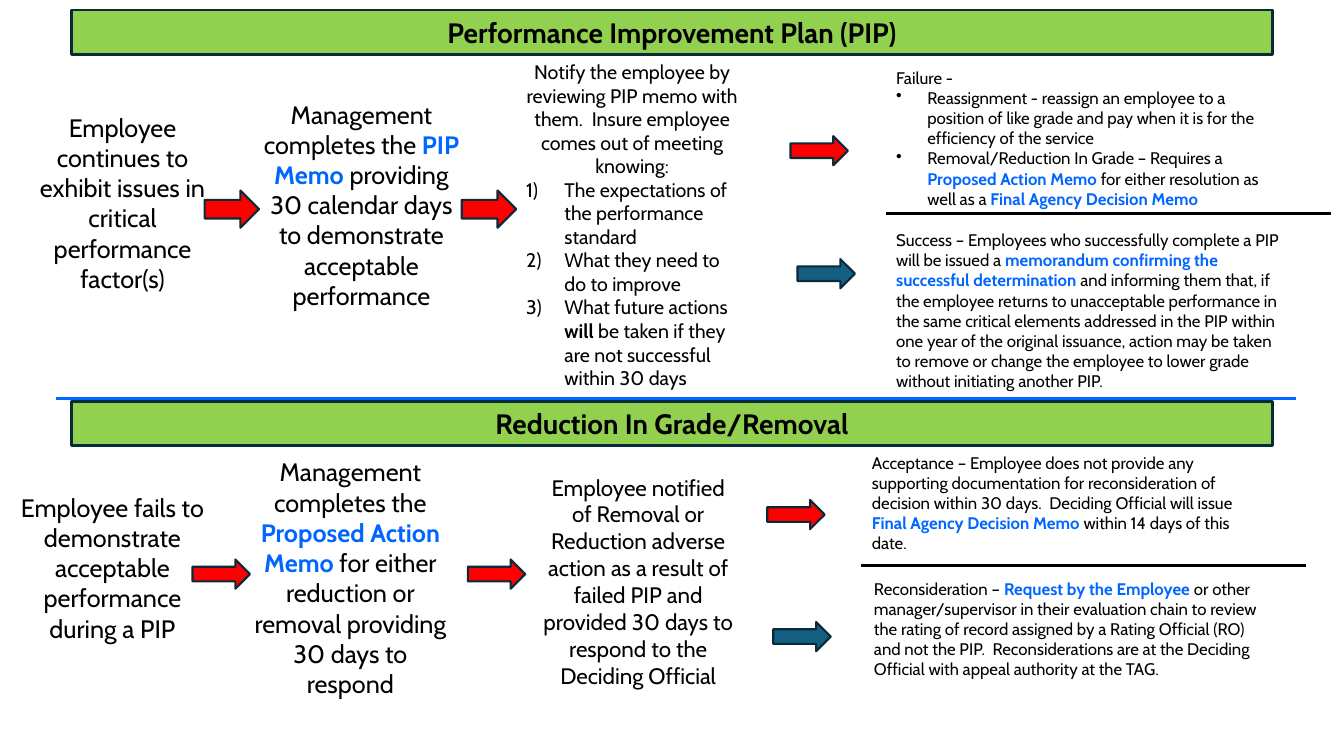
from dataclasses import dataclass

from lxml import etree
from pptx import Presentation
from pptx.dml.color import RGBColor
from pptx.enum.shapes import MSO_CONNECTOR, MSO_SHAPE
from pptx.enum.text import MSO_ANCHOR, MSO_AUTO_SIZE, PP_ALIGN
from pptx.oxml.ns import qn
from pptx.util import Inches, Pt

RECT = MSO_SHAPE.RECTANGLE
ARROW = MSO_SHAPE.RIGHT_ARROW
STRAIGHT = MSO_CONNECTOR.STRAIGHT
TOP, MIDDLE = MSO_ANCHOR.TOP, MSO_ANCHOR.MIDDLE
LEFT, CENTER = PP_ALIGN.LEFT, PP_ALIGN.CENTER
GROW = MSO_AUTO_SIZE.SHAPE_TO_FIT_TEXT


@dataclass(frozen=True)
class Theme:
    face: str = "Cabin"
    ink: RGBColor = RGBColor(0, 0, 0)
    link: RGBColor = RGBColor(0x00, 0x66, 0xFF)
    edge: RGBColor = RGBColor(0x09, 0x2A, 0x39)
    green: RGBColor = RGBColor(0x92, 0xD0, 0x50)
    red: RGBColor = RGBColor(0xFF, 0x00, 0x00)
    teal: RGBColor = RGBColor(0x15, 0x60, 0x82)
    title: int = 20
    step: int = 18
    note: int = 16
    list: int = 14
    small: int = 12


THEME = Theme()


def style(para, size, align, bold=False):
    para.alignment = align
    font = para.font
    font.name, font.size, font.bold = THEME.face, Pt(size), bold
    font.color.rgb = THEME.ink


def add_runs(para, text):
    for part in text.split("|"):
        run = para.add_run()
        run.text = part.lstrip("@!")
        if part[0] in "@!":
            run.font.bold = True
        if part[0] == "@":
            run.font.color.rgb = THEME.link


def add_mark(para, tag, value, indent):
    props = para._p.get_or_add_pPr()
    props.set("marL", str(Inches(indent)))
    props.set("indent", str(-Inches(indent)))
    mark = etree.Element(qn(f"a:{tag}"))
    mark.set("char" if tag == "buChar" else "type", value)
    props.insert_element_before(mark, "a:tabLst", "a:defRPr", "a:extLst")


def add_text(slide, box, size, text, align=LEFT, anchor=TOP):
    frame = slide.shapes.add_textbox(*map(Inches, box)).text_frame
    frame.word_wrap = True
    frame.auto_size = GROW
    frame.vertical_anchor = anchor
    para = frame.paragraphs[0]
    style(para, size, align)
    add_runs(para, text)
    return frame


def add_items(frame, items, size, tag, value, indent):
    for item in items:
        para = frame.add_paragraph()
        style(para, size, LEFT)
        add_mark(para, tag, value, indent)
        add_runs(para, item)


def add_block(slide, kind, box, fill, width):
    shape = slide.shapes.add_shape(kind, *map(Inches, box))
    shape.shadow.inherit = False
    shape.fill.solid()
    shape.fill.fore_color.rgb = fill
    shape.line.color.rgb = THEME.edge
    shape.line.width = Pt(width)
    return shape


def add_bar(slide, top, text):
    bar = add_block(slide, RECT, (0.71, top, 11.91, 0.44), THEME.green, 2)
    frame = bar.text_frame
    frame.word_wrap = True
    frame.vertical_anchor = MIDDLE
    para = frame.paragraphs[0]
    style(para, THEME.title, CENTER, True)
    add_runs(para, text)


def add_arrow(slide, left, top, fill, width=0.57, height=0.29):
    add_block(slide, ARROW, (left, top, width, height), fill, 1.5)


def add_rule(slide, left, right, top, color):
    ends = map(Inches, (left, top, right, top))
    rule = slide.shapes.add_connector(STRAIGHT, *ends)
    rule.line.color.rgb = color
    rule.line.width = Pt(2)
    etree.SubElement(rule._element.spPr, qn("a:effectLst"))


def add_step(slide, left, top, height, text):
    box = (left, top, 2.15, height)
    add_text(slide, box, THEME.step, text, CENTER, MIDDLE)


def add_plan(slide):
    add_bar(slide, 0.1, "Performance Improvement Plan (PIP)")
    add_step(slide, 0.14, 1.05, 1.92,
             "Employee continues to exhibit issues in critical performance factor(s)")
    add_step(slide, 2.51, 0.92, 2.22,
             "Management completes the |@PIP Memo |providing 30 calendar days "
             "to demonstrate acceptable performance")
    for left in (2.03, 4.58):
        add_arrow(slide, left, 1.89, THEME.red, 0.54, 0.37)
    notify = add_text(
        slide, (5.12, 0.53, 2.3, 3.4), THEME.list,
        "Notify the employee by reviewing PIP memo with them.  Insure employee "
        "comes out of meeting knowing:", CENTER, MIDDLE)
    add_items(notify, (
        "The expectations of the performance standard",
        "What they need to do to improve",
        "What future actions |!will| be taken if they are not successful "
        "within 30 days",
    ), THEME.list, "buAutoNum", "arabicParenR", 0.38)
    add_arrow(slide, 7.84, 1.35, THEME.red)
    fail = add_text(slide, (8.79, 0.62, 3.96, 1.51), THEME.small, "Failure -")
    add_items(fail, (
        "Reassignment - reassign an employee to a position of like grade and "
        "pay when it is for the efficiency of the service",
        "Removal/Reduction In Grade – Requires a |@Proposed Action Memo |"
        "for either resolution as well as a |@Final Agency Decision Memo",
    ), THEME.small, "buChar", "•", 0.31)
    add_rule(slide, 8.79, 13.2, 2.12, THEME.ink)
    add_arrow(slide, 7.91, 2.57, THEME.teal)
    add_text(slide, (8.79, 2.23, 4.06, 1.72), THEME.small,
             "Success – Employees who successfully complete a PIP will be issued "
             "a |@memorandum confirming the successful determination |and "
             "informing them that, if the employee returns to unacceptable "
             "performance in the same critical elements addressed in the PIP "
             "within one year of the original issuance, action may be taken to "
             "remove or change the employee to lower grade without initiating "
             "another PIP.")


def add_removal(slide):
    add_bar(slide, 3.98, "Reduction In Grade/Removal")
    add_step(slide, 0.04, 4.82, 1.62,
             "Employee fails to demonstrate acceptable performance during a PIP")
    add_step(slide, 2.4, 4.62, 2.22,
             "Management completes the |@Proposed Action Memo |for either "
             "reduction or removal providing 30 days to respond")
    for left in (1.91, 4.64):
        add_arrow(slide, left, 5.55, THEME.red)
    add_text(slide, (5.29, 4.65, 2.08, 2.26), THEME.note,
             "Employee notified of Removal or Reduction adverse action as a "
             "result of failed PIP and provided 30 days to respond to the "
             "Deciding Official", CENTER)
    add_arrow(slide, 7.61, 4.96, THEME.red)
    add_text(slide, (8.55, 4.44, 3.96, 1.11), THEME.small,
             "Acceptance – Employee does not provide any supporting "
             "documentation for reconsideration of decision within 30 days.  "
             "Deciding Official will issue |@Final Agency Decision Memo |"
             "within 14 days of this date.")
    add_rule(slide, 8.54, 12.95, 5.61, THEME.ink)
    add_arrow(slide, 7.67, 6.17, THEME.teal)
    add_text(slide, (8.57, 5.69, 4.06, 1.11), THEME.small,
             "Reconsideration – |@Request by the Employee |or other "
             "manager/supervisor in their evaluation chain to review the rating "
             "of record assigned by a Rating Official (RO) and not the PIP.  "
             "Reconsiderations are at the Deciding Official with appeal "
             "authority at the TAG.")


def main():
    deck = Presentation()
    deck.slide_width, deck.slide_height = Inches(13.33), Inches(7.5)
    slide = deck.slides.add_slide(deck.slide_layouts[6])
    add_plan(slide)
    add_rule(slide, 0.56, 12.85, 3.95, THEME.link)
    add_removal(slide)
    deck.save("out.pptx")


if __name__ == "__main__":
    main()
